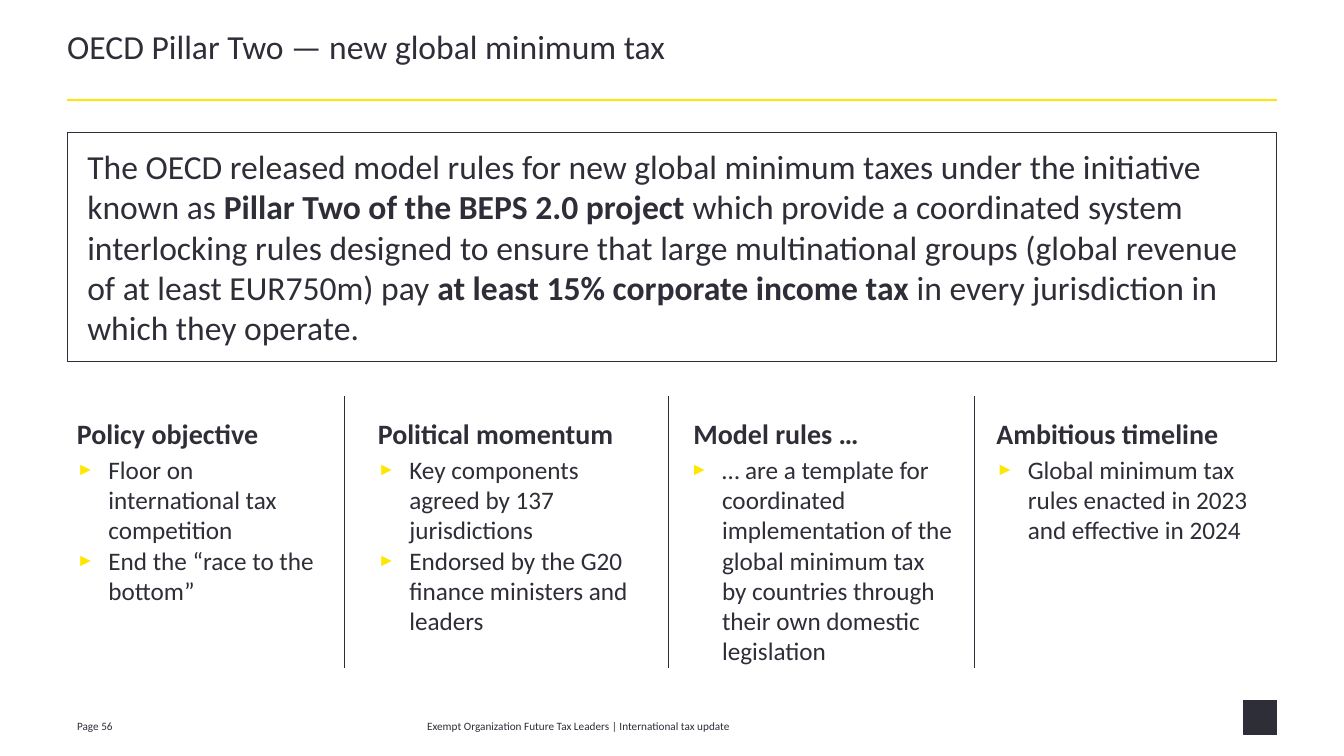
from lxml.etree import SubElement
from pptx import Presentation
from pptx.dml.color import RGBColor
from pptx.enum.shapes import MSO_CONNECTOR, MSO_SHAPE
from pptx.enum.text import MSO_ANCHOR, MSO_AUTO_SIZE, PP_ALIGN
from pptx.oxml.ns import qn
from pptx.util import Pt

INK = RGBColor(0x2E, 0x2E, 0x38)
YELLOW = RGBColor(0xFF, 0xE6, 0x00)
FACE = "Calibri"

TITLE = "OECD Pillar Two — new global minimum tax"
# Words between asterisks are bold.
INTRO = (
    "The OECD released model rules for new global minimum taxes under the "
    "initiative known as *Pillar Two of the BEPS 2.0 project *which provide a "
    "coordinated system interlocking rules designed to ensure that large "
    "multinational groups (global revenue of at least EUR750m) pay *at least "
    "15% corporate income tax *in every jurisdiction in which they operate."
)
# Heading, heading left, list left, list width, points
COLUMNS = [
    ("Policy objective", 55, 55, 178.5,
     ["Floor on international tax competition",
      "End the “race to the bottom”"]),
    ("Political momentum", 270, 270, 195,
     ["Key components agreed by 137 jurisdictions",
      "Endorsed by the G20 finance ministers and leaders"]),
    ("Model rules …", 495.5, 493.5, 187,
     ["… are a template for coordinated implementation of the global minimum "
      "tax by countries through their own domestic legislation"]),
    ("Ambitious timeline", 712, 712, 195,
     ["Global minimum tax rules enacted in 2023 and effective in 2024"]),
]
BARS = [246.5, 478, 696.5]
FOOTERS = [
    ("Page 56", 48, 53, PP_ALIGN.LEFT),
    ("Exempt Organization Future Tax Leaders | International tax update",
     255, 317, PP_ALIGN.CENTER),
]

LEFT, WIDE = 48, 864.5
HEAD_TOP, LIST_TOP, LIST_HIGH = 297.5, 324.5, 153
BAR_TOP, BAR_END = 283, 477.5
INDENT = 22.5


def place(shape, x, y, w, h):
    shape.left, shape.top, shape.width, shape.height = Pt(x), Pt(y), Pt(w), Pt(h)
    return shape


def mark(para):
    """Give a paragraph the yellow arrow bullet and its hanging indent."""
    props = para._p.get_or_add_pPr()
    props.set("marL", str(Pt(INDENT)))
    props.set("indent", str(-Pt(INDENT)))
    color = SubElement(props, qn("a:buClr"))
    SubElement(color, qn("a:srgbClr")).set("val", str(YELLOW))
    SubElement(props, qn("a:buSzPct")).set("val", "70000")
    SubElement(props, qn("a:buFont")).set("typeface", "Arial")
    SubElement(props, qn("a:buChar")).set("char", "►")


def write(shape, lines, size, bold=False, align=PP_ALIGN.LEFT, inset=(0, 0),
          anchor=MSO_ANCHOR.TOP, bullet=False, pitch=1.0):
    frame = shape.text_frame
    frame.word_wrap = True
    frame.auto_size = MSO_AUTO_SIZE.NONE
    frame.vertical_anchor = anchor
    frame.margin_left = frame.margin_right = Pt(inset[0])
    frame.margin_top = frame.margin_bottom = Pt(inset[1])
    for i, line in enumerate(lines):
        para = frame.add_paragraph() if i else frame.paragraphs[0]
        if bullet:
            mark(para)
        para.alignment = align
        para.line_spacing = pitch
        para.space_before = para.space_after = Pt(0)
        for j, part in enumerate(line.split("*")):
            run = para.add_run()
            run.text = part
            font = run.font
            font.name, font.size = FACE, Pt(size)
            font.bold = bold or j % 2 == 1
            font.color.rgb = INK


def rule(shapes, x1, y1, x2, y2, color, weight):
    line = shapes.add_connector(
        MSO_CONNECTOR.STRAIGHT, Pt(x1), Pt(y1), Pt(x2), Pt(y2))
    line.line.color.rgb = color
    line.line.width = Pt(weight)
    SubElement(line._element.spPr, qn("a:effectLst"))


def box(shapes, x, y, w, h):
    rect = shapes.add_shape(MSO_SHAPE.RECTANGLE, Pt(x), Pt(y), Pt(w), Pt(h))
    rect.shadow.inherit = False
    rect.fill.background()
    rect.line.color.rgb = INK
    rect.line.width = Pt(0.75)
    return rect


def label(shapes, x, y, w, h):
    return shapes.add_textbox(Pt(x), Pt(y), Pt(w), Pt(h))


def main():
    deck = Presentation()
    deck.slide_width, deck.slide_height = Pt(960.5), Pt(540)
    # The Comparison layout has a title and four body placeholders.
    slide = deck.slides.add_slide(deck.slide_layouts[4])
    shapes = slide.shapes

    write(place(shapes.title, LEFT, 23, WIDE, 47), [TITLE], 24, pitch=0.85)
    rule(shapes, LEFT, 71.5, LEFT + WIDE, 71.5, YELLOW, 1.5)

    write(box(shapes, LEFT, 94.5, WIDE, 163.5), [INTRO], 24,
          inset=(14.4, 3.6), anchor=MSO_ANCHOR.MIDDLE)

    bodies = list(slide.placeholders)[1:]
    for body, (head, x, left, wide, points) in zip(bodies, COLUMNS):
        write(label(shapes, x, HEAD_TOP, 195, 24.5), [head], 20, bold=True)
        write(place(body, left, LIST_TOP, wide, LIST_HIGH), points, 18,
              bullet=True)

    for x in BARS:
        rule(shapes, x, BAR_TOP, x, BAR_END, INK, 0.75)

    for text, x, wide, align in FOOTERS:
        write(label(shapes, x, 510, wide, 14.5), [text], 8, align=align,
              inset=(7.2, 3.6))

    # Plain block where the emblem sits
    block = box(shapes, 889, 500.5, 23.5, 24.5)
    block.fill.solid()
    block.fill.fore_color.rgb = INK

    deck.save("out.pptx")


if __name__ == "__main__":
    main()
